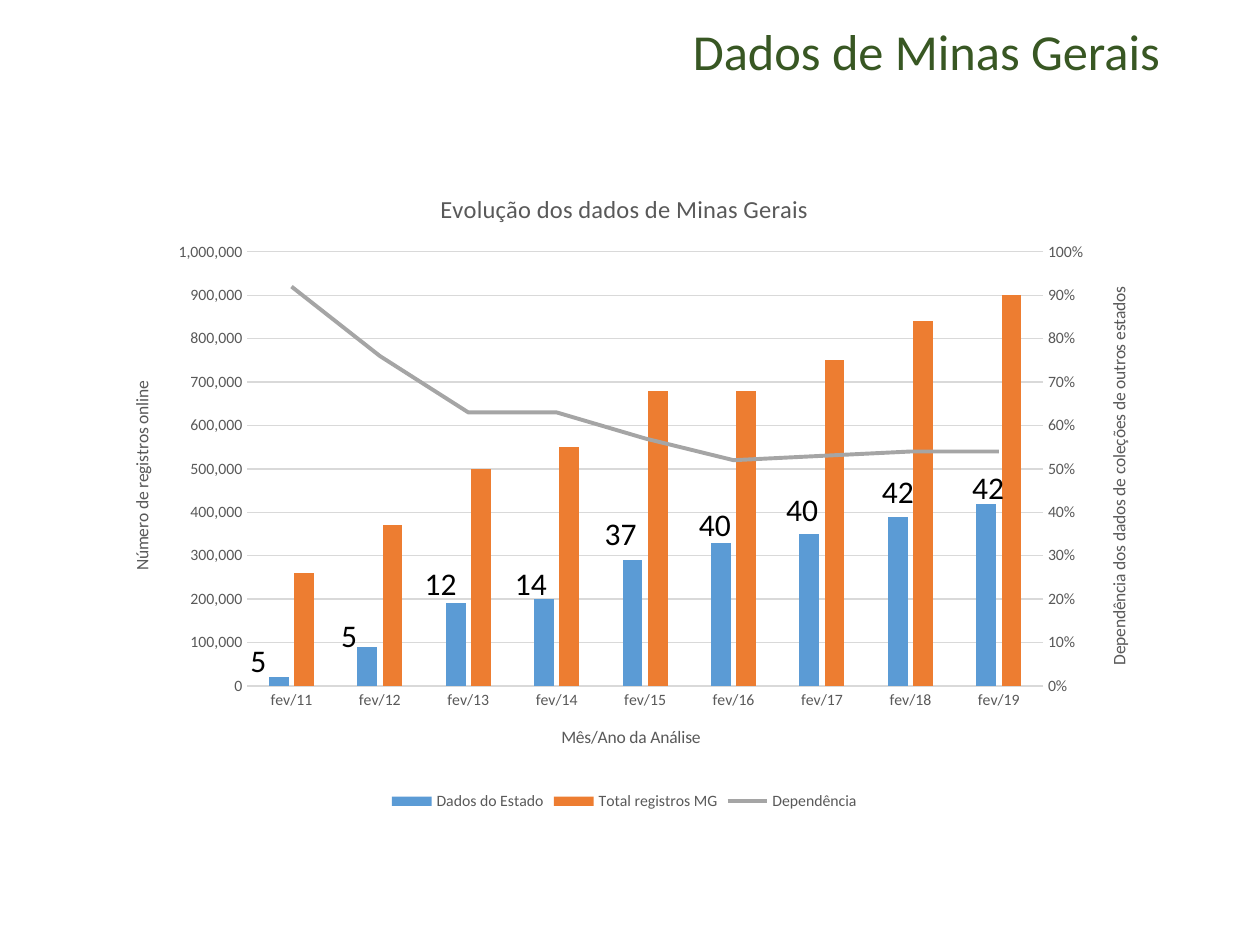
"""Build the Minas Gerais slide: records chart with a dependence line and count labels."""
import pptx
import pptx.chart.axis
import pptx.chart.data
import pptx.dml.color
import pptx.enum.chart
import pptx.enum.text
import pptx.oxml
import pptx.oxml.ns
import pptx.util

Cm, Pt = pptx.util.Cm, pptx.util.Pt
qn = pptx.oxml.ns.qn
enum = pptx.enum.chart
HUES = {"title": "385723", "text": "595959", "grid": "D9D9D9", "label": "000000",
        "state": "5B9BD5", "total": "ED7D31", "share": "A5A5A5"}


def hue(name):
    return pptx.dml.color.RGBColor.from_string(HUES[name])


def style(font, size, name="text"):
    font.name, font.size, font.bold = "Calibri", Pt(size), False
    font.color.rgb = hue(name)


deck = pptx.Presentation()
deck.slide_width, deck.slide_height = Cm(25.4), Cm(19.05)
slide = deck.slides.add_slide(deck.slide_layouts[6])

frame = slide.shapes.add_textbox(Cm(1.75), Cm(0.41), Cm(21.89), Cm(1.35)).text_frame
frame.word_wrap = True
frame.vertical_anchor = pptx.enum.text.MSO_ANCHOR.MIDDLE
para = frame.paragraphs[0]
para.text = "Dados de Minas Gerais"
para.alignment = pptx.enum.text.PP_ALIGN.RIGHT
para.line_spacing = 0.9
style(para.font, 28.8, "title")

data = pptx.chart.data.CategoryChartData()
data.categories = [f"fev/{year}" for year in range(11, 20)]
data.add_series("Dados do Estado", [20000, 90000, 190000, 200000, 290000,
                                    330000, 350000, 390000, 420000], "#,##0")
data.add_series("Total registros MG", [260000, 370000, 500000, 550000, 680000,
                                       680000, 750000, 840000, 900000], "#,##0")
data.add_series("Dependência", [0.92, 0.76, 0.63, 0.63, 0.57,
                                0.52, 0.53, 0.54, 0.54], "0%")
chart = slide.shapes.add_chart(enum.XL_CHART_TYPE.COLUMN_CLUSTERED, Cm(2.03), Cm(3.38),
                               Cm(21.11), Cm(13.06), data).chart
style(chart.font, 10, "label")
chart.has_title = True
para = chart.chart_title.text_frame.paragraphs[0]
para.text = "Evolução dos dados de Minas Gerais"
style(para.font, 14)
chart.has_legend = True
chart.legend.position = enum.XL_LEGEND_POSITION.BOTTOM
chart.legend.include_in_layout = False
style(chart.legend.font, 9)

bars = chart.plots[0]
bars.gap_width, bars.overlap = 219, -27
bars.vary_by_categories = False
for row, name in zip(bars.series, ["state", "total"]):
    row.format.fill.solid()
    row.format.fill.fore_color.rgb = hue(name)

area = chart.element.find(".//" + qn("c:plotArea"))
group = area.find(qn("c:barChart"))
share = group.findall(qn("c:ser"))[2]
for flag in share.findall(qn("c:invertIfNegative")):
    share.remove(flag)
space = pptx.oxml.ns.nsdecls("c")
curve = pptx.oxml.parse_xml(
    f'<c:lineChart {space}><c:grouping val="standard"/><c:varyColors val="0"/>'
    '<c:marker val="1"/><c:axId val="5001"/><c:axId val="5002"/></c:lineChart>')
curve.insert(2, share)
group.addnext(curve)
side = pptx.oxml.parse_xml(
    f'<c:valAx {space}><c:axId val="5002"/><c:scaling/><c:delete val="0"/>'
    '<c:axPos val="r"/><c:numFmt formatCode="0%" sourceLinked="0"/>'
    '<c:majorTickMark val="none"/><c:minorTickMark val="none"/><c:tickLblPos val="nextTo"/>'
    '<c:crossAx val="5001"/><c:crosses val="max"/></c:valAx>')
base = pptx.oxml.parse_xml(
    f'<c:catAx {space}><c:axId val="5001"/><c:scaling/><c:delete val="1"/>'
    '<c:axPos val="b"/><c:majorTickMark val="none"/><c:minorTickMark val="none"/>'
    '<c:tickLblPos val="nextTo"/><c:crossAx val="5002"/><c:crosses val="autoZero"/></c:catAx>')
main = area.find(qn("c:valAx"))
main.addnext(side)
side.addnext(base)

for old in area.findall(qn("c:layout")):
    area.remove(old)
spots = "".join(f'<c:{key} val="{size}"/>' for key, size in
                [("x", 0.14), ("y", 0.13), ("w", 0.76), ("h", 0.67)])
area.insert(0, pptx.oxml.parse_xml(
    f'<c:layout {space}><c:manualLayout><c:layoutTarget val="inner"/>'
    f'<c:xMode val="edge"/><c:yMode val="edge"/>{spots}</c:manualLayout></c:layout>'))

row = chart.plots[1].series[0]
row.smooth = False
row.marker.style = enum.XL_MARKER_STYLE.NONE
row.format.line.color.rgb = hue("share")
row.format.line.width = Pt(2.25)

left, right = [pptx.chart.axis.ValueAxis(node) for node in (main, side)]
for axis, words in [(chart.category_axis, "Mês/Ano da Análise"),
                    (left, "Número de registros online"),
                    (right, "Dependência dos dados de coleções de outros estados")]:
    axis.major_tick_mark = axis.minor_tick_mark = enum.XL_TICK_MARK.NONE
    style(axis.tick_labels.font, 9)
    axis.has_title = True
    text = axis.axis_title.text_frame
    text.text = words
    style(text.paragraphs[0].font, 10)
for axis, top, form in [(left, 1000000, "#,##0"), (right, 1, "0%")]:
    axis.minimum_scale, axis.maximum_scale, axis.major_unit = 0, top, top / 10
    axis.tick_labels.number_format = form
    axis.tick_labels.number_format_is_linked = False
    axis.format.line.fill.background()
for node in (main, side):
    node.find(".//" + qn("a:bodyPr")).set("rot", "-5400000")
left.has_major_gridlines, right.has_major_gridlines = True, False
for line in (chart.category_axis.format.line, left.major_gridlines.format.line):
    line.color.rgb = hue("grid")
    line.width = Pt(0.75)

for count, x, y in [(5, 4.8, 12.8), (5, 6.63, 12.29), (12, 8.31, 11.25),
                    (14, 10.13, 11.25), (37, 11.94, 10.24), (40, 13.84, 10.06),
                    (40, 15.6, 9.75), (42, 17.53, 9.4), (42, 19.35, 9.32)]:
    wide = 0.84 if count < 10 else 1.17
    frame = slide.shapes.add_textbox(Cm(x), Cm(y), Cm(wide), Cm(1.02)).text_frame
    frame.word_wrap = False
    frame.auto_size = pptx.enum.text.MSO_AUTO_SIZE.SHAPE_TO_FIT_TEXT
    para = frame.paragraphs[0]
    para.text = str(count)
    style(para.font, 18, "label")

deck.save("out.pptx")
